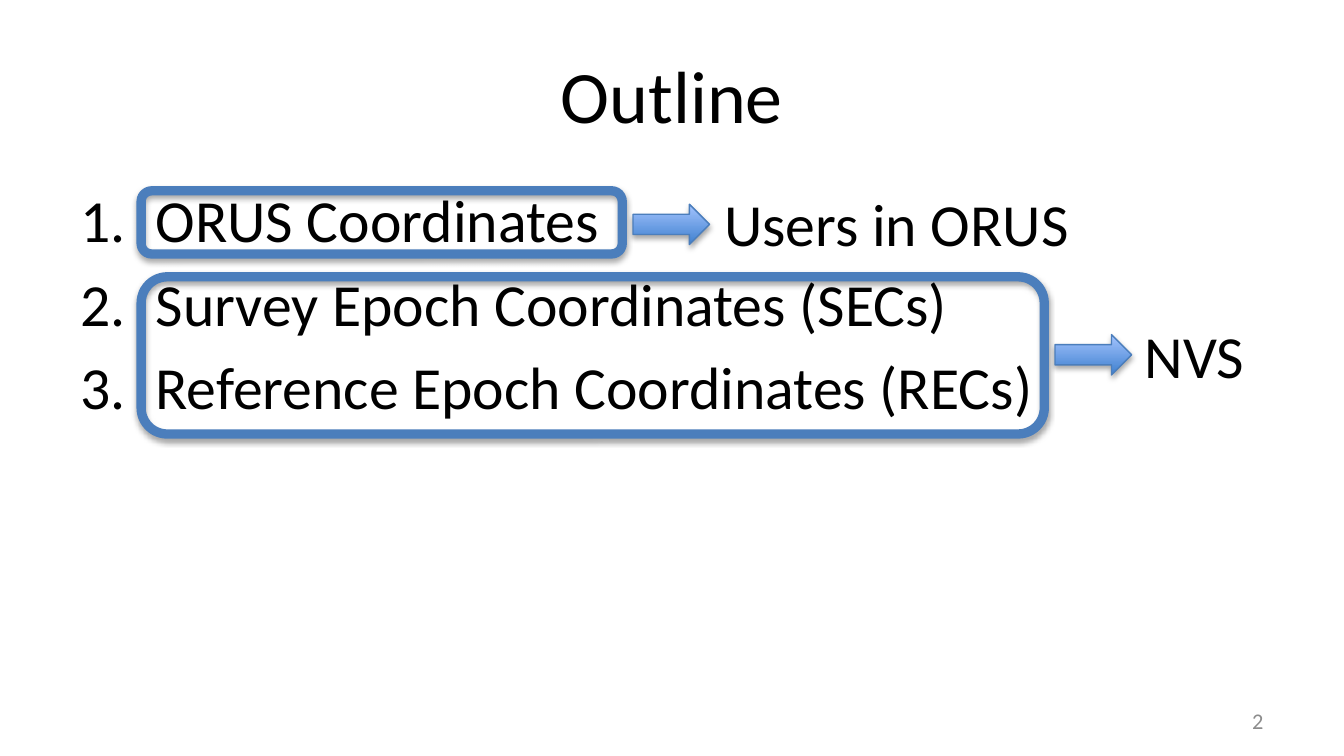
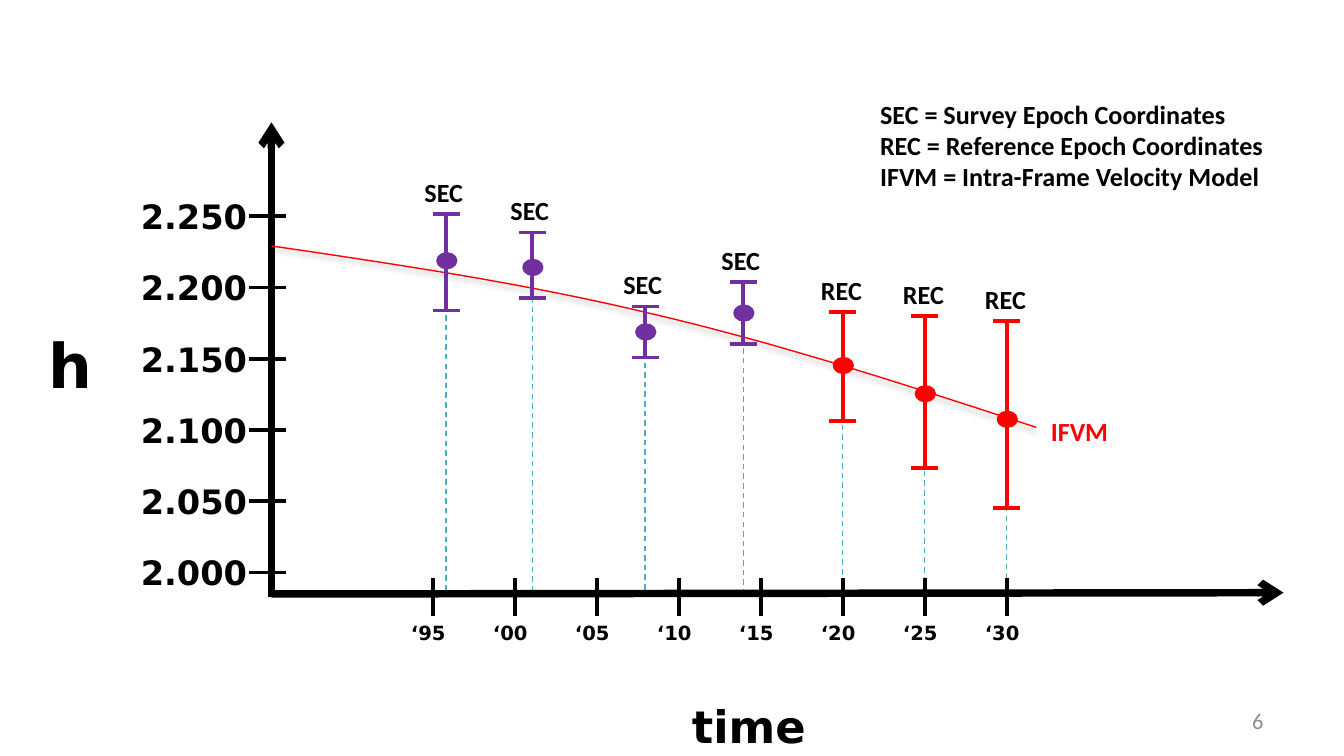
from dataclasses import dataclass

import pptx
from pptx import util as u
from pptx.dml import color as dml
from pptx.enum import dml as line_enum
from pptx.enum import shapes, text
from pptx.oxml import ns, parse_xml
from pptx.shapes import autoshape, connector, shapetree

COLORS = {
    "black": "000000",
    "outline": "4B7EBC",
    "arrow_dark": "3F80CE",
    "arrow_light": "A4C4FF",
    "drop": "4BACC6",
    "survey": "7030A0",
    "reference": "FF0000",
    "number": "8C8C8C",
}
BODY_FONT = "Calibri"
AXIS_FONT = "DejaVu Sans"
SLIDE_WIDTH = u.Inches(10)
SLIDE_HEIGHT = u.Emu(SLIDE_WIDTH * 9 // 16)
ORIGIN_X, ORIGIN_Y = 2.02, 4.42
AXIS_DROP_Y = 4.41

Shapes = shapetree.SlideShapes | shapetree.GroupShapes
Point = tuple[float, float]


@dataclass(frozen=True)
class Box:
    x: float
    y: float
    w: float
    h: float

    def lengths(self) -> list[u.Length]:
        return [u.Inches(v) for v in (self.x, self.y, self.w, self.h)]


@dataclass(frozen=True)
class Style:
    size: float
    font: str = BODY_FONT
    color: str = "black"
    bold: bool = False
    align: text.PP_ALIGN = text.PP_ALIGN.LEFT
    anchor: text.MSO_ANCHOR = text.MSO_ANCHOR.TOP
    before: float = 0
    wrap: bool = True


@dataclass(frozen=True)
class ErrorBar:
    label: str
    color: str
    x: float
    high: float
    middle: float
    low: float
    drop_from: float


TITLE = Style(39.6, align=text.PP_ALIGN.CENTER, anchor=text.MSO_ANCHOR.MIDDLE)
BODY = Style(32, before=6.4)
NUMBER = Style(12, color="number", align=text.PP_ALIGN.RIGHT, anchor=text.MSO_ANCHOR.MIDDLE)
LABEL = Style(14, bold=True)
MODEL_LABEL = Style(14, color="reference", bold=True)
HEIGHT_VALUE = Style(18, AXIS_FONT, bold=True, wrap=False)
YEAR = Style(10.5, AXIS_FONT, bold=True, wrap=False)
HEIGHT_NAME = Style(33, AXIS_FONT, bold=True, wrap=False)
TIME_NAME = Style(24, AXIS_FONT, bold=True, wrap=False)

ERROR_BARS = [
    ErrorBar("SEC", "survey", 3.32, 1.59, 1.94, 2.31, 2.06),
    ErrorBar("SEC", "survey", 3.96, 1.73, 1.99, 2.22, 2.14),
    ErrorBar("SEC", "survey", 4.8, 2.28, 2.47, 2.66, 2.34),
    ErrorBar("SEC", "survey", 5.53, 2.1, 2.33, 2.56, 2.52),
    ErrorBar("REC", "reference", 6.27, 2.32, 2.72, 3.13, 2.73),
    ErrorBar("REC", "reference", 6.88, 2.35, 2.93, 3.48, 2.93),
    ErrorBar("REC", "reference", 7.49, 2.39, 3.12, 3.78, 3.12),
]
MODEL_CURVES: list[tuple[Point, Point, Point, Point]] = [
    ((2.02, 1.83), (2.97, 1.97), (3.92, 2.11), (4.87, 2.34)),
    ((4.87, 2.34), (5.81, 2.56), (6.76, 2.87), (7.71, 3.18)),
]


def rgb(name: str) -> dml.RGBColor:
    return dml.RGBColor.from_string(COLORS[name])


def add_text(shp: Shapes, box: Box, lines: list[str], style: Style) -> autoshape.Shape:
    tb = shp.add_textbox(*box.lengths())
    tf = tb.text_frame
    tf.word_wrap = style.wrap
    tf.vertical_anchor = style.anchor
    tf.text = "\n".join(lines)
    for p in tf.paragraphs:
        p.alignment = style.align
        p.space_before = u.Pt(style.before)
        for r in p.runs:
            r.font.name = style.font
            r.font.size = u.Pt(style.size)
            r.font.bold = style.bold
            r.font.color.rgb = rgb(style.color)
    return tb


def number_paragraphs(tb: autoshape.Shape) -> None:
    indent = u.Inches(0.56)
    for p in tb.text_frame.paragraphs:
        props = p._p.get_or_add_pPr()
        props.set("marL", str(indent))
        props.set("indent", str(-indent))
        props.append(parse_xml(
            f'<a:buFont {ns.nsdecls("a")} typeface="+mj-lt"/>'))
        props.append(parse_xml(
            f'<a:buAutoNum {ns.nsdecls("a")} type="arabicPeriod"/>'))


def add_shadow(sp: autoshape.Shape) -> None:
    sp.shadow.inherit = False
    effects = sp._element.spPr.find(ns.qn("a:effectLst"))
    effects.append(parse_xml(
        f'<a:outerShdw {ns.nsdecls("a")} blurRad="{u.Pt(3.1)}" dist="{u.Pt(1.8)}" '
        'dir="5400000" rotWithShape="0"><a:srgbClr val="000000">'
        '<a:alpha val="35000"/></a:srgbClr></a:outerShdw>'))


def add_line(shp: Shapes, start: Point, end: Point, color: str, width: float,
             dashed: bool = False, arrow: bool = False) -> connector.Connector:
    cx = shp.add_connector(
        shapes.MSO_CONNECTOR.STRAIGHT, *[u.Inches(v) for v in (*start, *end)])
    cx.line.color.rgb = rgb(color)
    cx.line.width = u.Pt(width)
    if dashed:
        cx.line.dash_style = line_enum.MSO_LINE.DASH
    if arrow:
        cx.line._get_or_add_ln().append(parse_xml(
            f'<a:tailEnd {ns.nsdecls("a")} type="arrow"/>'))
    cx._element.spPr.append(parse_xml(f'<a:effectLst {ns.nsdecls("a")}/>'))
    return cx


def add_frame(shp: Shapes, box: Box) -> None:
    sp = shp.add_shape(shapes.MSO_SHAPE.ROUNDED_RECTANGLE, *box.lengths())
    sp.fill.background()
    sp.line.color.rgb = rgb("outline")
    sp.line.width = u.Pt(5)
    add_shadow(sp)


def add_block_arrow(shp: Shapes, x: float, y: float) -> None:
    sp = shp.add_shape(shapes.MSO_SHAPE.RIGHT_ARROW, *Box(x, y, 0.57, 0.3).lengths())
    sp.fill.gradient()
    sp.fill.gradient_angle = 90
    for stop, place, name in zip(
            sp.fill.gradient_stops, (0, 1), ("arrow_dark", "arrow_light")):
        stop.position = place
        stop.color.rgb = rgb(name)
    sp.line.color.rgb = rgb("outline")
    sp.line.width = u.Pt(0.75)
    add_shadow(sp)


def add_error_bar(shp: Shapes, bar: ErrorBar) -> None:
    add_line(shp, (bar.x, bar.drop_from), (bar.x, AXIS_DROP_Y), "drop", 0.75, dashed=True)
    group = shp.add_group_shape().shapes
    dot = group.add_shape(
        shapes.MSO_SHAPE.OVAL, *Box(bar.x - 0.06, bar.middle - 0.05, 0.13, 0.1).lengths())
    dot.shadow.inherit = False
    dot.fill.solid()
    dot.fill.fore_color.rgb = rgb(bar.color)
    dot.line.color.rgb = rgb(bar.color)
    dot.line.width = u.Pt(2)
    add_line(group, (bar.x, bar.low), (bar.x, bar.high), bar.color, 2)
    for y in (bar.low, bar.high):
        add_line(group, (bar.x - 0.1, y), (bar.x + 0.1, y), bar.color, 2)
    add_text(shp, Box(bar.x - 0.26, bar.high - 0.33, 0.53, 0.34), [bar.label], LABEL)


def bezier(points: tuple[Point, Point, Point, Point], t: float) -> Point:
    weights = ((1 - t) ** 3, 3 * t * (1 - t) ** 2, 3 * t**2 * (1 - t), t**3)
    return (sum(w * p[0] for w, p in zip(weights, points)),
            sum(w * p[1] for w, p in zip(weights, points)))


def add_model_curve(shp: Shapes) -> None:
    steps = 20
    points = [bezier(c, i / steps) for c in MODEL_CURVES for i in range(1, steps + 1)]
    start = MODEL_CURVES[0][0]
    builder = shp.build_freeform(u.Inches(start[0]), u.Inches(start[1]))
    builder.add_line_segments([(u.Inches(x), u.Inches(y)) for x, y in points], close=False)
    sp = builder.convert_to_shape()
    sp.fill.background()
    sp.line.color.rgb = rgb("reference")
    sp.line.width = u.Pt(0.75)
    add_shadow(sp)


def add_height_axis(shp: Shapes) -> None:
    add_line(shp, (ORIGIN_X, 4.44), (ORIGIN_X, 0.91), "black", 4, arrow=True)
    for i in range(6):
        y = 1.61 + 0.53 * i
        add_line(shp, (2.13, y), (1.85, y), "black", 2)
        add_text(shp, Box(0.95, y - 0.2, 1.01, 0.4), [f"{2.25 - 0.05 * i:.3f}"], HEIGHT_VALUE)
    add_text(shp, Box(0.26, 2.38, 0.53, 0.66), ["h"], HEIGHT_NAME)


def add_time_axis(shp: Shapes) -> None:
    add_line(shp, (ORIGIN_X, ORIGIN_Y), (9.55, AXIS_DROP_Y), "black", 4, arrow=True)
    group = shp.add_group_shape().shapes
    for i, year in enumerate(range(1995, 2031, 5)):
        x = 3.22 + 0.61 * i
        add_line(group, (x, 4.3), (x, 4.58), "black", 2)
        add_text(group, Box(x - 0.26, 4.57, 0.46, 0.28), [f"‘{year % 100:02d}"], YEAR)
    add_text(shp, Box(5.05, 5.15, 1.05, 0.5), ["time"], TIME_NAME)


def new_slide(prs: pptx.presentation.Presentation, number: int) -> shapetree.SlideShapes:
    s = prs.slides.add_slide(prs.slide_layouts[6])
    add_text(s.shapes, Box(7.17, 5.21, 2.33, 0.3), [str(number)], NUMBER)
    return s.shapes


def build_outline(prs: pptx.presentation.Presentation) -> None:
    shp = new_slide(prs, 2)
    add_text(shp, Box(0.5, 0.23, 9, 0.94), ["Outline"], TITLE)
    items = add_text(shp, Box(0.5, 1.31, 9, 3.71), [
        "ORUS Coordinates",
        "Survey Epoch Coordinates (SECs)",
        "Reference Epoch Coordinates (RECs)",
    ], BODY)
    number_paragraphs(items)
    add_frame(shp, Box(1.05, 1.42, 3.58, 0.47))
    add_frame(shp, Box(1.05, 2.06, 6.72, 1.17))
    add_text(shp, Box(5.29, 1.34, 3.03, 0.64), ["Users in ORUS"], BODY)
    add_text(shp, Box(8.42, 2.32, 1, 0.64), ["NVS"], BODY)
    add_block_arrow(shp, 4.71, 1.52)
    add_block_arrow(shp, 7.85, 2.49)


def build_height_plot(prs: pptx.presentation.Presentation) -> None:
    shp = new_slide(prs, 6)
    add_height_axis(shp)
    add_model_curve(shp)
    add_text(shp, Box(7.72, 3.04, 0.68, 0.34), ["IFVM"], MODEL_LABEL)
    for bar in ERROR_BARS:
        add_error_bar(shp, bar)
    add_time_axis(shp)
    add_text(shp, Box(6.45, 0.68, 3.1, 0.81), [
        "SEC = Survey Epoch Coordinates",
        "REC = Reference Epoch Coordinates",
        "IFVM = Intra-Frame Velocity Model",
    ], LABEL)


def main() -> None:
    prs = pptx.Presentation()
    prs.slide_width = SLIDE_WIDTH
    prs.slide_height = SLIDE_HEIGHT
    build_outline(prs)
    build_height_plot(prs)
    prs.save("out.pptx")


if __name__ == "__main__":
    main()
